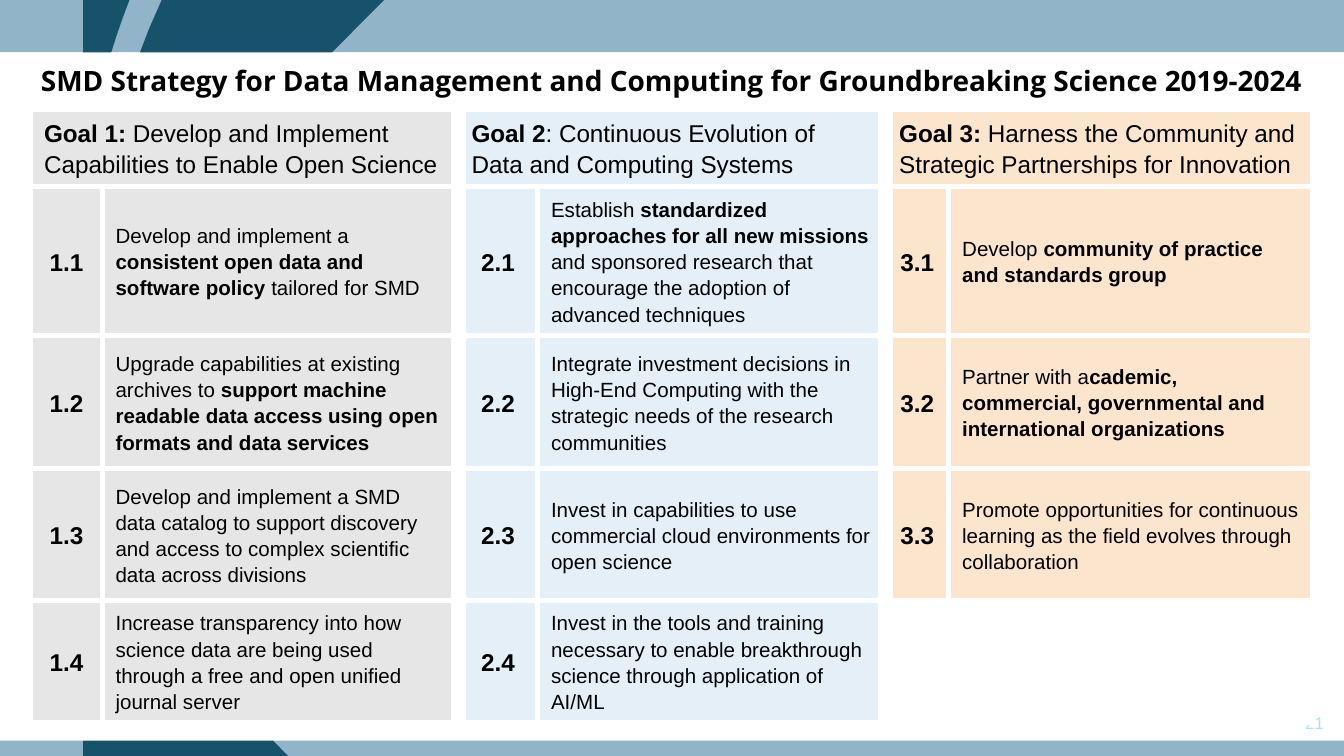
from lxml import etree
from pptx import Presentation
from pptx.dml.color import RGBColor as Rgb
from pptx.enum.shapes import MSO_SHAPE as Kind
from pptx.enum.text import MSO_ANCHOR as Anchor, PP_ALIGN as Align
from pptx.oxml.ns import qn
from pptx.util import Cm, Pt

WIDE, HIGH = 25.4, 14.29
BAND, DARK, WHITE = "92B4C8", "17526B", "FFFFFF"
TINTS = ["E7E6E6", "E4EFF8", "FCE5CD"]
COLS = [1.35, 6.73, 1.5, 6.58, 1.19, 6.88]
ROWS = [1.45, 2.82, 2.51, 2.51, 2.29]
GOALS = [
    ("**Goal 1: **Develop and Implement Capabilities to Enable Open Science", [
        "Develop and implement a **consistent open data and software policy** tailored for SMD",
        "Upgrade capabilities at existing archives to **support machine readable data access "
        "using open formats and data services**",
        "Develop and implement a SMD data catalog to support discovery and access to complex "
        "scientific data across divisions",
        "Increase transparency into how science data are being used through a free and open "
        "unified journal server",
    ]),
    ("**Goal 2**: Continuous Evolution of Data and Computing Systems", [
        "Establish **standardized approaches for all new missions **and sponsored research "
        "that encourage the adoption of advanced techniques",
        "Integrate investment decisions in High-End Computing with the strategic needs of the "
        "research communities",
        "Invest in capabilities to use commercial cloud environments for open science",
        "Invest in the tools and training necessary to enable breakthrough science through "
        "application of AI/ML",
    ]),
    ("**Goal 3: **Harness the Community and Strategic Partnerships for Innovation", [
        "Develop **community of practice and standards group**",
        "Partner with a**cademic, commercial, governmental and international organizations**",
        "Promote opportunities for continuous learning as the field evolves through "
        "collaboration",
    ]),
]


def tint(hue):
    return Rgb.from_string(hue)


def paint(shape, hue):
    shape.shadow.inherit = False
    shape.fill.solid()
    shape.fill.fore_color.rgb = tint(hue)
    shape.line.fill.background()


def band(slide, top, high, hue):
    bar = slide.shapes.add_shape(
        Kind.RECTANGLE, Cm(-0.03), Cm(top), Cm(WIDE + 0.08), Cm(high))
    paint(bar, hue)


def bend(*knots, steps=16):
    spots = []
    for n in range(steps + 1):
        t = n / steps
        parts = ((1 - t) ** 3, 3 * t * (1 - t) ** 2, 3 * t * t * (1 - t), t ** 3)
        spots.append(tuple(sum(p * k[i] for p, k in zip(parts, knots)) for i in (0, 1)))
    return spots


def patch(slide, *rings):
    pen = None
    for ring in rings:
        first, *rest = [(Cm(x), Cm(y)) for x, y in ring]
        if pen is None:
            pen = slide.shapes.build_freeform(*first)
        else:
            pen.move_to(*first)
        pen.add_line_segments(rest, close=True)
    paint(pen.convert_to_shape(), DARK)


def swoosh(slide):
    tip, heel = (4.34, 12.88), (3.99, 12.67)
    patch(slide,
          bend((3.07, -0.03), (1.63, 3.05), (0.94, 7.57), tip)
          + bend(tip, tip, (0.61, 6.02), (7.29, -0.03)))
    patch(slide,
          [(1.57, 14.4)] + bend((5.56, 14.4), (5.03, 13.89), (4.52, 13.31), heel)
          + bend(heel, heel, (1.96, 10.03), (1.57, 6.1)),
          bend((1.57, 3.56), (1.7, 2.46), (1.96, 1.24), (2.46, -0.03)) + [(1.57, -0.03)])


def style(run, size, face, hue, bold):
    font = run.font
    font.size, font.name, font.bold = Pt(size), face, bold
    font.color.rgb = tint(hue)


def label(slide, box, text, size, face, hue, bold, align, anchor):
    frame = slide.shapes.add_textbox(*map(Cm, box)).text_frame
    frame.word_wrap = True
    frame.vertical_anchor = anchor
    frame.margin_left = frame.margin_right = Cm(0.18)
    frame.margin_top = frame.margin_bottom = Cm(0.18 if bold else 0.1)
    frame.text = text
    para = frame.paragraphs[0]
    para.alignment = align
    style(para.runs[0], size, face, hue, bold)


def edge(cell, side, width):
    props = cell._tc.get_or_add_tcPr()
    line = etree.SubElement(props, qn("a:ln" + side), w=str(Pt(width)))
    fill = etree.SubElement(line, qn("a:solidFill"))
    etree.SubElement(fill, qn("a:srgbClr"), val=WHITE)


def write(cell, text, size, align=Align.LEFT):
    cell.vertical_anchor = Anchor.MIDDLE
    cell.margin_top = cell.margin_bottom = Cm(0.07)
    para = cell.text_frame.paragraphs[0]
    para.alignment = align
    para.line_spacing = 1.15
    for n, part in enumerate(text.split("**")):
        if part:
            run = para.add_run()
            run.text = part
            style(run, size, "Arial", "000000", n % 2 == 1)


def frame_cell(cell, col, hue):
    wide = {"L": col in (2, 4), "R": col in (1, 3)}
    for side in "LRTB":
        edge(cell, side, 9 if wide.get(side) else 3)
    cell.fill.solid()
    cell.fill.fore_color.rgb = tint(hue)


def grid(slide):
    table = slide.shapes.add_table(
        len(ROWS), len(COLS), Cm(0.58), Cm(2.07), Cm(sum(COLS)), Cm(sum(ROWS))).table
    table.first_row = table.horz_banding = False
    for col, wide in zip(table.columns, COLS):
        col.width = Cm(wide)
    for row, high in zip(table.rows, ROWS):
        row.height = Cm(high)
    for g, (head, items) in enumerate(GOALS):
        left = 2 * g
        for r in range(len(ROWS)):
            hue = TINTS[g] if r <= len(items) else WHITE
            for c in (left, left + 1):
                frame_cell(table.cell(r, c), c, hue)
        top = table.cell(0, left)
        top.merge(table.cell(0, left + 1))
        rim = top._tc.tcPr.find(qn("a:lnR"))
        rim.set("w", str(Pt(9 if g < 2 else 3)))
        write(top, head, 13)
        top.margin_right = Cm(0.32)
        for r, item in enumerate(items, 1):
            write(table.cell(r, left), f"**{g + 1}.{r}**", 13, Align.CENTER)
            write(table.cell(r, left + 1), item, 11)


def main():
    deck = Presentation()
    deck.slide_width, deck.slide_height = Cm(WIDE), Cm(HIGH)
    slide = deck.slides.add_slide(deck.slide_layouts[6])
    band(slide, 0, 0.99, BAND)
    band(slide, 13.41, 0.99, BAND)
    swoosh(slide)
    band(slide, 0.99, 13.01, WHITE)
    label(slide, (19.48, 13.28, 5.72, 0.76), "21", 9, "Arial", "AAE3F7",
          False, Align.RIGHT, Anchor.MIDDLE)
    grid(slide)
    label(slide, (-0.28, 1.02, 25.96, 1.02),
          "SMD Strategy for Data Management and Computing for Groundbreaking Science 2019-2024",
          15, "Open Sans", "000000", True, Align.CENTER, Anchor.TOP)
    deck.save("out.pptx")


if __name__ == "__main__":
    main()
